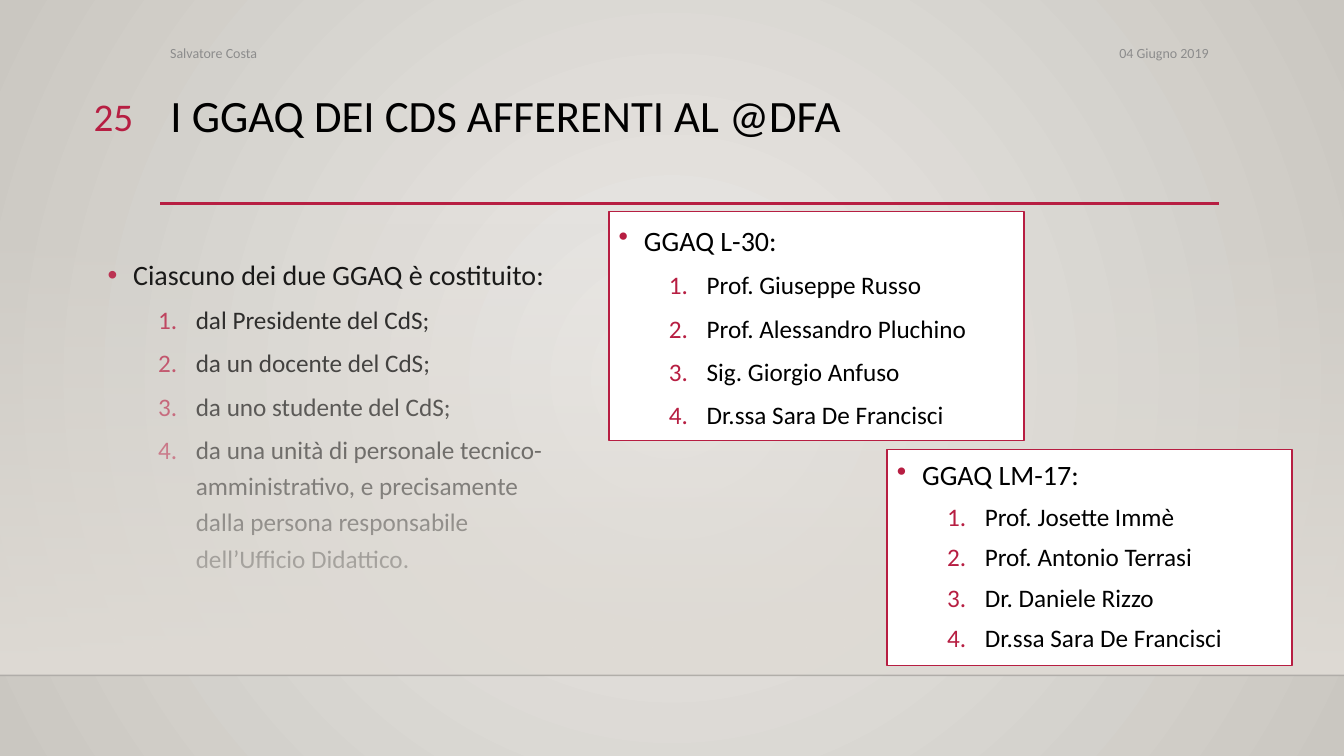
from pptx import Presentation
from pptx.dml.color import RGBColor
from pptx.enum.shapes import MSO_CONNECTOR, MSO_SHAPE
from pptx.enum.text import MSO_ANCHOR, MSO_AUTO_SIZE, PP_ALIGN
from pptx.oxml import parse_xml
from pptx.oxml.ns import nsdecls
from pptx.util import Cm, Pt

WIDTH, HEIGHT = 33.87, 19.05
FLOOR = 17.02
ACCENT = "B71E42"
SAND = "DFDBD5"
GREY = "8C8C8C"


def color(value):
    return RGBColor.from_string(value)


def element(tag, attributes="", content=""):
    return parse_xml(f"<a:{tag} {nsdecls('a')} {attributes}>{content}</a:{tag}>")


def write(paragraph, text, size=18, fill="000000", font="Calibri",
          align=PP_ALIGN.LEFT, spacing=1.0, before=0):
    paragraph.alignment = align
    paragraph.line_spacing = spacing
    paragraph.space_before = Pt(before)
    run = paragraph.add_run()
    run.text = text
    run.font.name = font
    run.font.size = Pt(size)
    run.font.color.rgb = color(fill)


class SlideBuilder:
    def __init__(self, presentation):
        self.slide = presentation.slides.add_slide(presentation.slide_layouts[1])
        self.shapes = self.slide.shapes

    def gradient(self, fill, start, end):
        fill.gradient()
        for stop, value in zip(fill.gradient_stops, (start, end)):
            stop.color.rgb = color(value)

    def background(self, center, edge):
        self.gradient(self.slide.background.fill, center, edge)
        direction = self.slide.element.xpath(".//p:bg//a:lin")[0]
        middle = '<a:fillToRect l="50000" t="50000" r="50000" b="50000"/>'
        direction.getparent().replace(
            direction, element("path", 'path="circle"', middle))

    def rectangle(self, left, top, width, height):
        shape = self.shapes.add_shape(
            MSO_SHAPE.RECTANGLE, Cm(left), Cm(top), Cm(width), Cm(height))
        shape.shadow.inherit = False
        return shape

    def fading_band(self, top, bottom):
        band = self.rectangle(0, top, WIDTH, bottom - top)
        band.line.fill.background()
        self.gradient(band.fill, SAND, SAND)
        band.fill.gradient_angle = 270
        band.element.xpath(".//a:gs/a:srgbClr")[0].append(element("alpha", 'val="0"'))

    def rule(self, left, right, y, fill, width, opacity=100):
        line = self.shapes.add_connector(
            MSO_CONNECTOR.STRAIGHT, Cm(left), Cm(y), Cm(right), Cm(y))
        line.line.color.rgb = color(fill)
        line.line.width = Pt(width)
        if opacity < 100:
            line.element.xpath(".//a:ln//a:srgbClr")[0].append(
                element("alpha", f'val="{opacity * 1000}"'))
        line.element.spPr.append(element("effectLst"))

    def frame(self, shape, anchor=MSO_ANCHOR.TOP):
        frame = shape.text_frame
        frame.word_wrap = True
        frame.auto_size = MSO_AUTO_SIZE.NONE
        frame.vertical_anchor = anchor
        return frame

    def place(self, shape, left, top, width, height):
        shape.left, shape.top = Cm(left), Cm(top)
        shape.width, shape.height = Cm(width), Cm(height)

    def title(self, text, *box):
        self.place(self.shapes.title, *box)
        frame = self.frame(self.shapes.title)
        write(frame.paragraphs[0], text, size=32, spacing=0.9)

    def label(self, text, *box, anchor=MSO_ANCHOR.MIDDLE, **style):
        shape = self.shapes.add_textbox(*map(Cm, box))
        write(self.frame(shape, anchor).paragraphs[0], text, **style)

    def bullet(self, paragraph, margin, hanging, mark):
        properties = paragraph._p.get_or_add_pPr()
        properties.set("marL", str(Cm(margin)))
        properties.set("indent", str(-Cm(hanging)))
        properties.append(element("buClr", "", f'<a:srgbClr val="{ACCENT}"/>'))
        properties.append(mark)

    def numbered_list(self, shape, heading, items, spacing):
        frame = self.frame(shape)
        first = frame.paragraphs[0]
        self.bullet(first, 0.64, 0.64, element("buChar", 'char="•"'))
        write(first, heading, size=20, spacing=spacing)
        for item in items:
            paragraph = frame.add_paragraph()
            paragraph.level = 1
            self.bullet(paragraph, 2.22, 0.95,
                        element("buAutoNum", 'type="arabicPeriod"'))
            write(paragraph, item, spacing=spacing, before=5)

    def body(self, heading, items, *box, spacing=1.2):
        shape = self.slide.placeholders[1]
        self.place(shape, *box)
        self.numbered_list(shape, heading, items, spacing)

    def card(self, heading, items, *box, spacing=1.2):
        shape = self.rectangle(*box)
        shape.fill.solid()
        shape.fill.fore_color.rgb = color("FFFFFF")
        shape.line.color.rgb = color(ACCENT)
        shape.line.width = Pt(1.25)
        self.numbered_list(shape, heading, items, spacing)


def main():
    presentation = Presentation()
    presentation.slide_width = Cm(WIDTH)
    presentation.slide_height = Cm(HEIGHT)
    builder = SlideBuilder(presentation)

    builder.background("ECEAE7", "CAC7C1")
    builder.fading_band(5.61, FLOOR)
    builder.rule(0, WIDTH, FLOOR, "000001", 1, opacity=20)
    builder.rule(4.04, 30.73, 5.13, ACCENT, 2.5)

    builder.title("I GGAQ DEI CDS AFFERENTI AL @DFA", 4.04, 2.24, 26.67, 2.92)
    builder.label("04 Giugno 2019", 20.98, 0.91, 9.73, 0.86,
                  size=10, fill=GREY, align=PP_ALIGN.RIGHT)
    builder.label("Salvatore Costa", 4.04, 0.91, 16.48, 0.86, size=10, fill=GREY)
    builder.label("25", 1.35, 2.21, 2.26, 1.4, anchor=MSO_ANCHOR.TOP,
                  size=28, fill=ACCENT, align=PP_ALIGN.RIGHT)

    builder.body("Ciascuno dei due GGAQ è costituito:", [
        "dal Presidente del CdS;",
        "da un docente del CdS;",
        "da uno studente del CdS;",
        "da una unità di personale tecnico-amministrativo, e precisamente "
        "dalla persona responsabile dell’Ufficio Didattico.",
    ], 2.46, 6.2, 12.12, 9.58)
    builder.card("GGAQ L-30:", [
        "Prof. Giuseppe Russo",
        "Prof. Alessandro Pluchino",
        "Sig. Giorgio Anfuso",
        "Dr.ssa Sara De Francisci",
    ], 15.34, 5.33, 10.46, 5.77)
    builder.card("GGAQ LM-17:", [
        "Prof. Josette Immè",
        "Prof. Antonio Terrasi",
        "Dr. Daniele Rizzo",
        "Dr.ssa Sara De Francisci",
    ], 22.35, 11.33, 10.21, 5.44, spacing=1.1)

    presentation.save("out.pptx")


if __name__ == "__main__":
    main()
